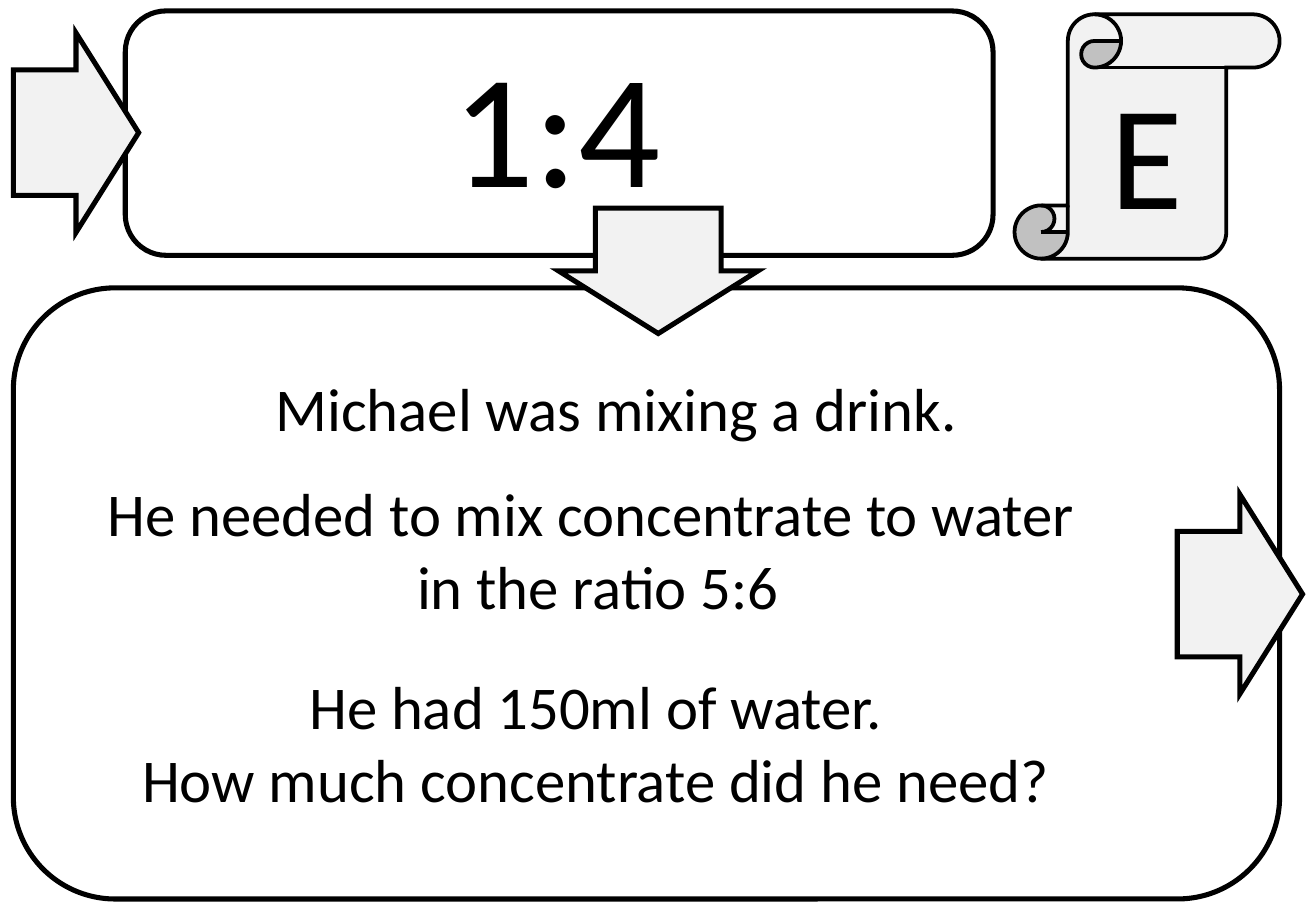
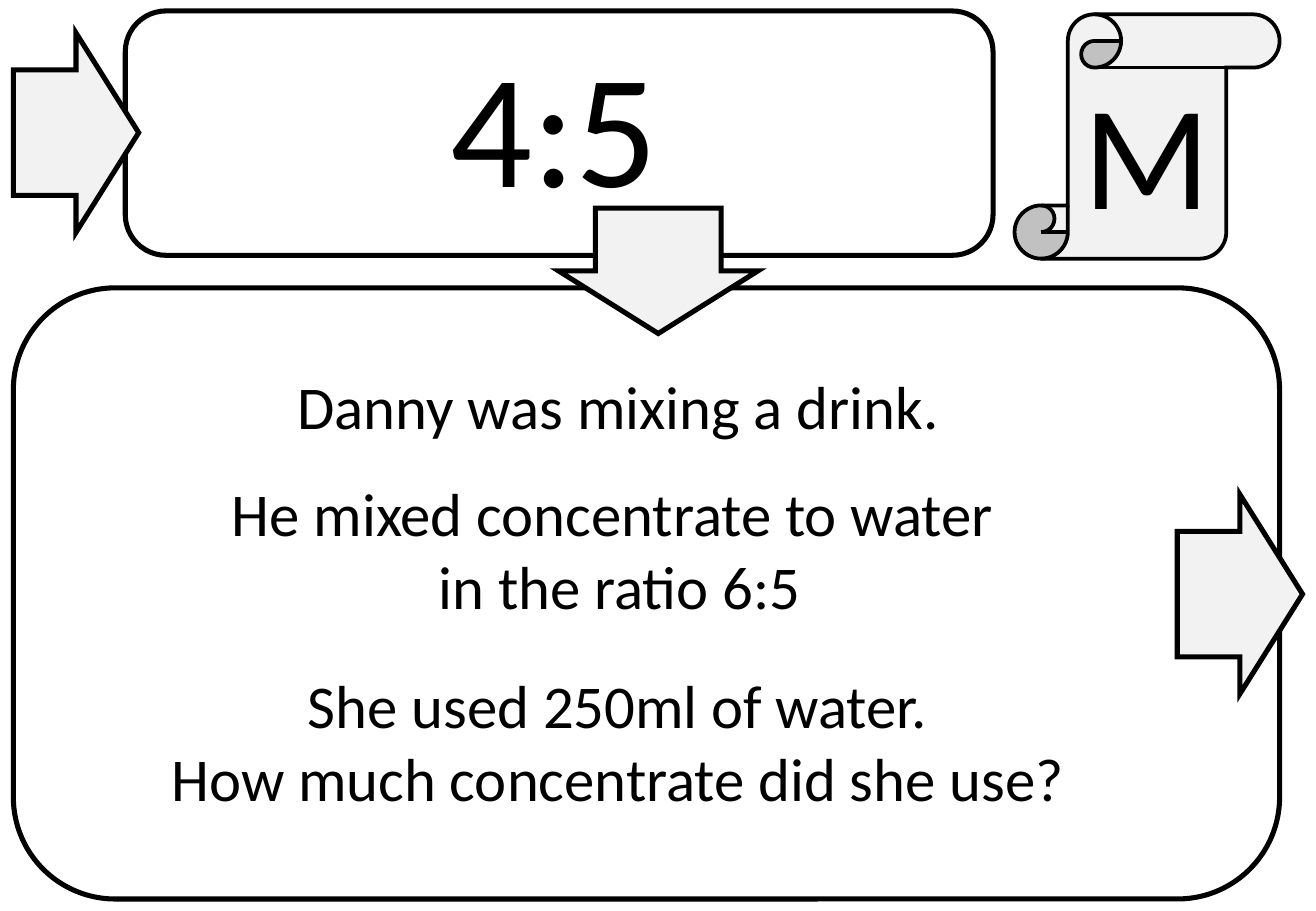
from pptx import Presentation
from pptx.dml.color import RGBColor
from pptx.enum.shapes import MSO_SHAPE
from pptx.enum.text import MSO_ANCHOR, MSO_AUTO_SIZE, PP_ALIGN
from pptx.util import Cm, Pt
from lxml.etree import SubElement
from pptx.oxml.ns import qn

BLACK = RGBColor(0x00, 0x00, 0x00)
PALE_GREY = RGBColor(0xF2, 0xF2, 0xF2)
FONT = "Calibri"
ARROW_SIZE = (2.62, 4.17)

PANELS = [(0.28, 6.02, 26.47, 12.78), (2.62, 0.23, 18.14, 5.11)]
ARROWS = [(24.61, 10.34, 0), (12.45, 3.58, 90), (0.28, 0.69, 0)]

CARDS = [
    ("E", [
        ("1:4", (9.22, 0.41, 4.9, 4.37), 96, PP_ALIGN.LEFT),
        ("Michael was mixing a drink.", (5.51, 7.62, 14.88, 1.8), 36, PP_ALIGN.LEFT),
        ("He needed to mix concentrate to water \nin the ratio 5:6",
         (1.91, 9.83, 21.18, 3.33), 36, PP_ALIGN.CENTER),
        ("He had 150ml of water.\nHow much concentrate did he need?",
         (2.64, 13.87, 19.63, 3.33), 36, PP_ALIGN.CENTER),
    ]),
    ("M", [
        ("4:5", (9.17, 0.41, 4.9, 4.37), 96, PP_ALIGN.LEFT),
        ("Danny was mixing a drink.", (5.97, 7.59, 14.05, 1.8), 36, PP_ALIGN.LEFT),
        ("He mixed concentrate to water \nin the ratio 6:5",
         (4.52, 9.83, 16.87, 3.33), 36, PP_ALIGN.CENTER),
        ("She used 250ml of water.\nHow much concentrate did she use?",
         (3.25, 13.84, 19.33, 3.33), 36, PP_ALIGN.CENTER),
    ]),
]


def write(frame, text, size=36, align=PP_ALIGN.CENTER, anchor=MSO_ANCHOR.TOP, wrap=False):
    frame.word_wrap = wrap
    frame.vertical_anchor = anchor
    frame.text = text
    for paragraph in frame.paragraphs:
        paragraph.alignment = align
        paragraph.font.name = FONT
        paragraph.font.size = Pt(size)
        paragraph.font.color.rgb = BLACK


def draw(slide, preset, box, fill=None, weight=3, adjustments=()):
    shape = slide.shapes.add_shape(preset, *map(Cm, box))
    shape.shadow.inherit = False
    if fill is None:
        shape.fill.background()
    else:
        shape.fill.solid()
        shape.fill.fore_color.rgb = fill
    shape.line.color.rgb = BLACK
    shape.line.width = Pt(weight)
    SubElement(shape.line._get_or_add_ln(), qn("a:miter"), lim="800000")
    for index, value in enumerate(adjustments):
        shape.adjustments[index] = value
    return shape


deck = Presentation()
deck.slide_width = Cm(27.51)
deck.slide_height = Cm(19.05)

for letter, passages in CARDS:
    card = deck.slides.add_slide(deck.slide_layouts[6])

    for panel in PANELS:
        draw(card, MSO_SHAPE.ROUNDED_RECTANGLE, panel)

    for left, top, turn in ARROWS:
        arrow = draw(card, MSO_SHAPE.RIGHT_ARROW, (left, top, *ARROW_SIZE),
                     fill=PALE_GREY, adjustments=(0.63, 0.5))
        arrow.rotation = turn

    scroll = draw(card, MSO_SHAPE.VERTICAL_SCROLL, (21.21, 0.3, 5.54, 5.11),
                  fill=PALE_GREY, weight=2.25, adjustments=(0.218,))
    write(scroll.text_frame, letter, size=88, anchor=MSO_ANCHOR.MIDDLE, wrap=True)

    for text, box, size, align in passages:
        passage = card.shapes.add_textbox(*map(Cm, box))
        write(passage.text_frame, text, size=size, align=align)
        passage.text_frame.auto_size = MSO_AUTO_SIZE.SHAPE_TO_FIT_TEXT

deck.save("out.pptx")
